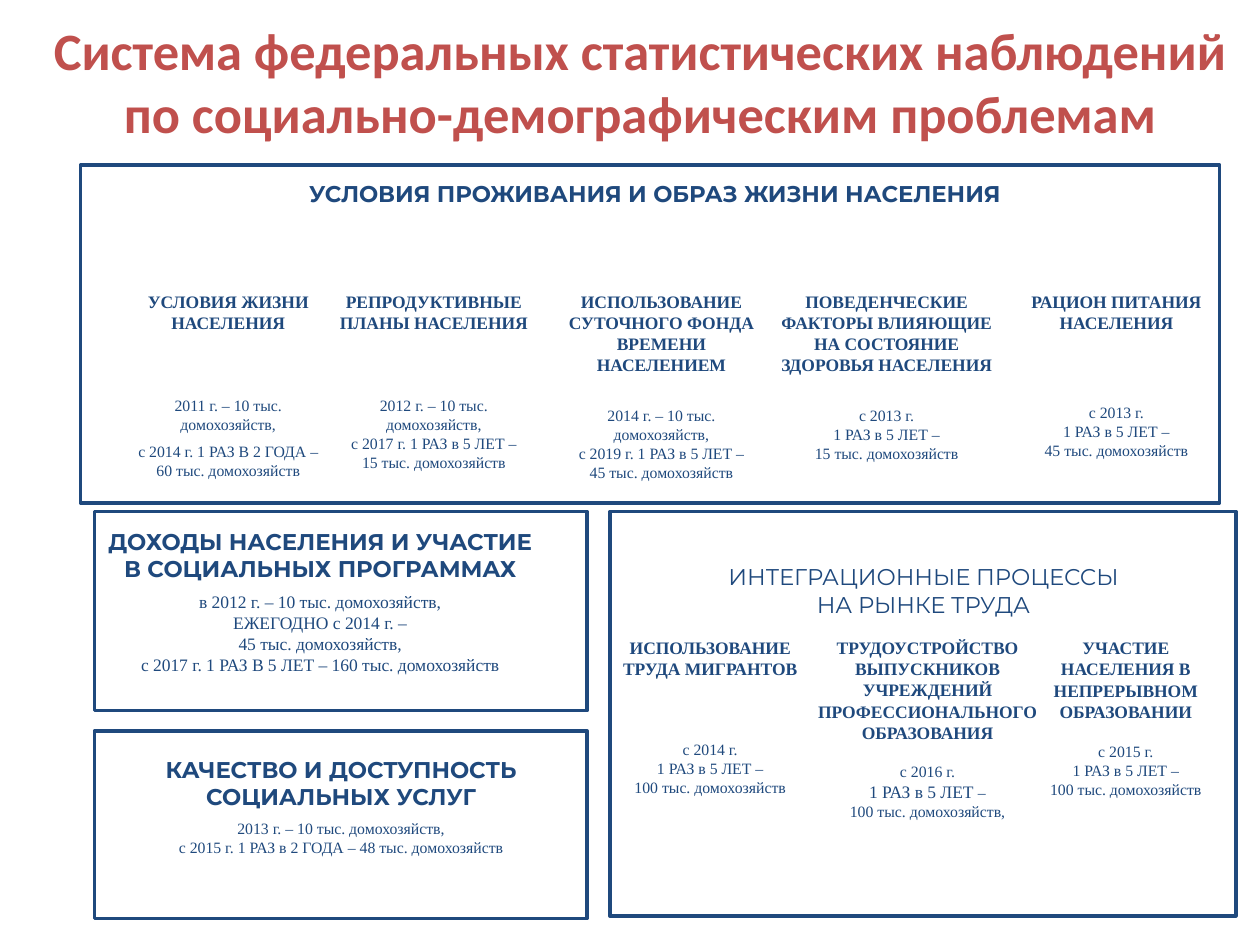
from pptx import Presentation
from pptx.dml.color import RGBColor
from pptx.enum.shapes import MSO_SHAPE
from pptx.enum.text import MSO_ANCHOR, MSO_AUTO_SIZE, PP_ALIGN
from pptx.util import Pt

NAVY, RED = "1F497D", "C0504D"
SERIF, SANS = "Times New Roman", "Montserrat"


def paint(part, code):
    part.rgb = RGBColor.from_string(code)


def write(par, text, font, size, bold=False, code=NAVY):
    """Add text to a paragraph, one run for each line."""
    par.alignment = PP_ALIGN.CENTER
    for i, line in enumerate(text.split("\n")):
        if i:
            par.add_line_break()
        run = par.add_run()
        run.text = line
        run.font.name, run.font.size, run.font.bold = font, Pt(size), bold
        paint(run.font.color, code)


def frame(slide, x, y, w, h):
    rect = slide.shapes.add_shape(MSO_SHAPE.RECTANGLE, Pt(x), Pt(y), Pt(w), Pt(h))
    rect.shadow.inherit = False
    rect.fill.background()
    paint(rect.line.color, NAVY)
    rect.line.width = Pt(2)


def block(slide, x, y, w, h, text, font=SERIF, size=10, bold=True):
    """Place a text box with a heading and return its text frame."""
    body = slide.shapes.add_textbox(Pt(x), Pt(y), Pt(w), Pt(h)).text_frame
    body.word_wrap = True
    write(body.paragraphs[0], text, font, size, bold)
    return body


def note(body, gap, text, size=9):
    par = body.add_paragraph()
    par.space_before = Pt(gap)
    write(par, text, SERIF, size)
    return par


def title(slide, x, y, w, h):
    head = slide.shapes.title
    head.left, head.top, head.width, head.height = Pt(x), Pt(y), Pt(w), Pt(h)
    body = head.text_frame
    body.word_wrap = True
    body.auto_size = MSO_AUTO_SIZE.NONE
    body.vertical_anchor = MSO_ANCHOR.MIDDLE
    write(body.paragraphs[0], "Система федеральных статистических наблюдений "
          "по социально-демографическим проблемам", "Calibri", 30, True, RED)


def living(slide, x, y, w, h):
    frame(slide, x, y, w, h)
    block(slide, x + 10, y + 5, 636, 23,
          "УСЛОВИЯ ПРОЖИВАНИЯ И ОБРАЗ ЖИЗНИ НАСЕЛЕНИЯ", SANS, 13)
    # Columns: left, width, heading, then gap and text of each note
    cols = [
        (10.9, 147, "УСЛОВИЯ ЖИЗНИ НАСЕЛЕНИЯ",
         [(36, "2011 г. – 10 тыс.\nдомохозяйств,"),
          (4.5, "c 2014 г. 1 РАЗ В 2 ГОДА –\n60 тыс. домохозяйств")]),
        (135.4, 133, "РЕПРОДУКТИВНЫЕ ПЛАНЫ НАСЕЛЕНИЯ",
         [(36, "2012 г. – 10 тыс.\nдомохозяйств,\n"
               "с 2017 г. 1 РАЗ в 5 ЛЕТ –\n15 тыс. домохозяйств")]),
        (268.6, 126.7, "ИСПОЛЬЗОВАНИЕ СУТОЧНОГО ФОНДА ВРЕМЕНИ НАСЕЛЕНИЕМ",
         [(17.5, "2014 г. – 10 тыс.\nдомохозяйств,\n"
                 "с 2019 г. 1 РАЗ в 5 ЛЕТ –\n45 тыс. домохозяйств")]),
        (389.6, 142, "ПОВЕДЕНЧЕСКИЕ ФАКТОРЫ ВЛИЯЮЩИЕ НА СОСТОЯНИЕ "
                     "ЗДОРОВЬЯ НАСЕЛЕНИЯ",
         [(17.5, "с 2013 г.\n1 РАЗ в 5 ЛЕТ –\n15 тыс. домохозяйств")]),
        (531.4, 121, "РАЦИОН ПИТАНИЯ НАСЕЛЕНИЯ",
         [(40, "с 2013 г.\n1 РАЗ в 5 ЛЕТ –\n45 тыс. домохозяйств")]),
    ]
    for dx, wide, head, notes in cols:
        body = block(slide, x + dx, y + 68.4, wide, 112, head)
        for gap, text in notes:
            note(body, gap, text)


def income(slide, x, y, w, h):
    frame(slide, x, y, w, h)
    body = block(slide, x - 4.3, y + 5.8, 266.4, 104,
                 "ДОХОДЫ НАСЕЛЕНИЯ И УЧАСТИЕ\nВ СОЦИАЛЬНЫХ ПРОГРАММАХ",
                 SANS, 13)
    note(body, 5, "в 2012 г. – 10 тыс. домохозяйств,\nЕЖЕГОДНО с 2014 г. –\n"
         "45 тыс. домохозяйств,\n"
         "с 2017 г. 1 РАЗ В 5 ЛЕТ – 160 тыс. домохозяйств", 10)


def service(slide, x, y, w, h):
    frame(slide, x, y, w, h)
    body = block(slide, x + 5.8, y + 10.8, 270, 66,
                 "КАЧЕСТВО И ДОСТУПНОСТЬ СОЦИАЛЬНЫХ УСЛУГ", SANS, 13)
    note(body, 4.5, "2013 г. – 10 тыс. домохозяйств,\n"
         "с 2015 г. 1 РАЗ в 2 ГОДА – 48 тыс. домохозяйств")


def labour(slide, x, y, w, h):
    frame(slide, x, y, w, h)
    block(slide, x + 8.6, y + 26, 341, 40,
          "ИНТЕГРАЦИОННЫЕ ПРОЦЕССЫ\nНА РЫНКЕ ТРУДА", SANS, 13, False)
    top = y + 68.4
    # Migrants
    body = block(slide, x - 2.2, top, 119, 112, "ИСПОЛЬЗОВАНИЕ ТРУДА МИГРАНТОВ")
    note(body, 34.5, "с 2014 г.\n1 РАЗ в 5 ЛЕТ –\n100 тыс. домохозяйств")
    # Graduates, with a larger middle line
    body = block(slide, x + 108, top, 147, 113, "ТРУДОУСТРОЙСТВО ВЫПУСКНИКОВ "
                 "УЧРЕЖДЕНИЙ ПРОФЕССИОНАЛЬНОГО ОБРАЗОВАНИЯ")
    note(body, 11, "с 2016 г.")
    par = note(body, 0, "1 РАЗ в 5 ЛЕТ ", 10)
    write(par, "–", SERIF, 9)
    note(body, 0, "100 тыс. домохозяйств,")
    # Learners
    body = block(slide, x + 238.3, top, 113, 101,
                 "УЧАСТИЕ НАСЕЛЕНИЯ В НЕПРЕРЫВНОМ ОБРАЗОВАНИИ")
    note(body, 11.5, "с 2015 г.\n1 РАЗ в 5 ЛЕТ –\n100 тыс. домохозяйств")


def main():
    deck = Presentation()
    deck.slide_width, deck.slide_height = Pt(720), Pt(540)
    slide = deck.slides.add_slide(deck.slide_layouts[5])
    title(slide, 20, 6.5, 692, 80)
    living(slide, 46, 94.3, 651, 193)
    income(slide, 54, 292.3, 281.5, 113.8)
    service(slide, 54, 417.6, 281.5, 107.3)
    labour(slide, 348.5, 292.3, 357.8, 231.1)
    deck.save("out.pptx")


if __name__ == "__main__":
    main()
